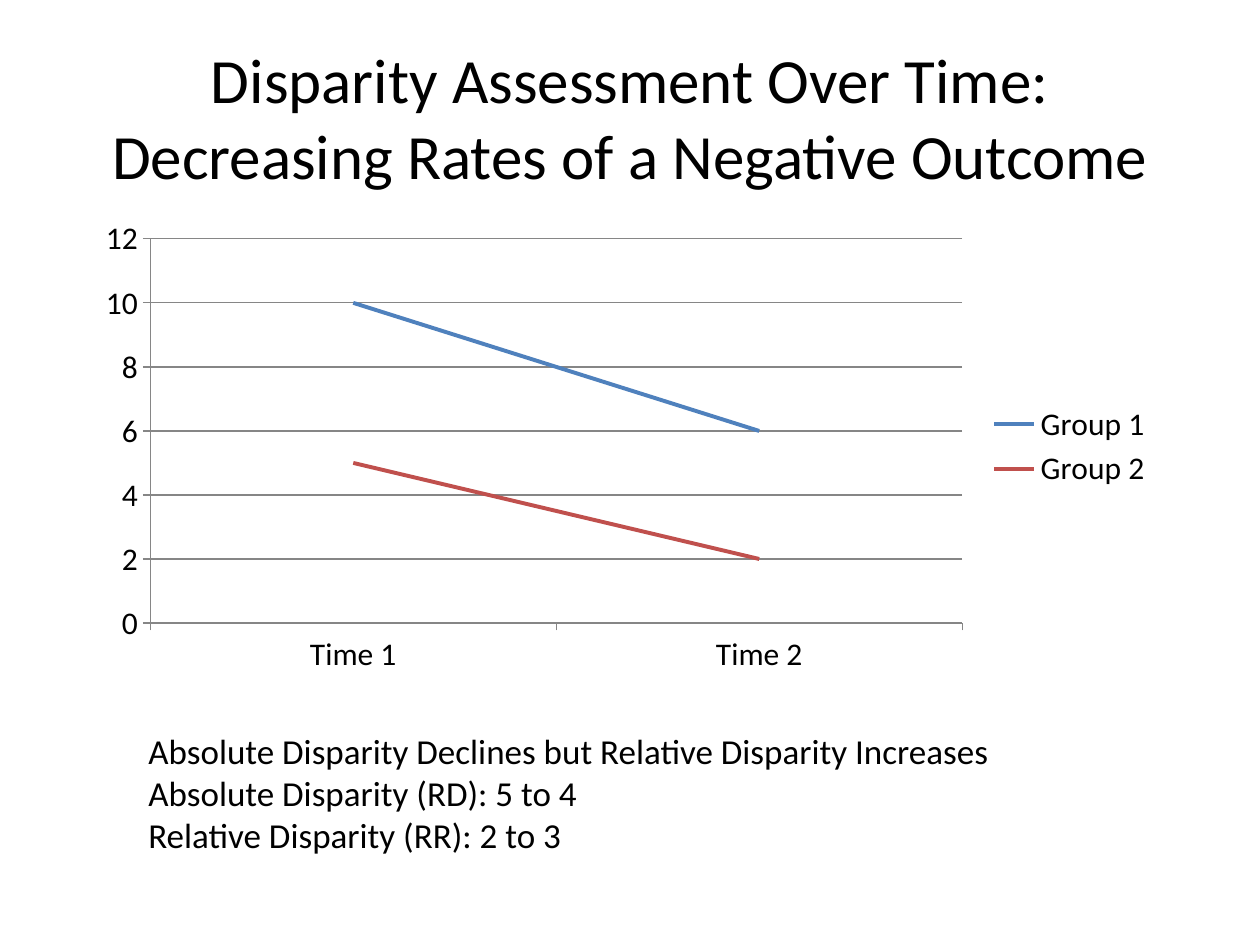
from pptx import Presentation
from pptx.chart.data import CategoryChartData
from pptx.dml.color import RGBColor
from pptx.enum.chart import XL_CHART_TYPE, XL_LEGEND_POSITION, XL_MARKER_STYLE, XL_TICK_MARK
from pptx.enum.text import MSO_ANCHOR, PP_ALIGN
from pptx.util import Cm, Pt

LINE_CHART = XL_CHART_TYPE.LINE
LEGEND_RIGHT = XL_LEGEND_POSITION.RIGHT
NO_MARKER = XL_MARKER_STYLE.NONE
TICK_OUTSIDE = XL_TICK_MARK.OUTSIDE
MIDDLE, TOP = MSO_ANCHOR.MIDDLE, MSO_ANCHOR.TOP
CENTER, LEFT = PP_ALIGN.CENTER, PP_ALIGN.LEFT

BLACK = RGBColor(0x00, 0x00, 0x00)
AXIS_GRAY = RGBColor(0x86, 0x86, 0x86)
BLUE = RGBColor(0x4F, 0x81, 0xBD)
RED = RGBColor(0xC0, 0x50, 0x4D)
FONT = "Calibri"

TITLE_BOX = (Cm(1.27), Cm(0.76), Cm(22.86), Cm(3.18))
CHART_BOX = (Cm(1.7), Cm(4.24), Cm(21.79), Cm(9.53))
FINDINGS_BOX = (Cm(2.74), Cm(14.58), Cm(21.59), Cm(2.82))

# A vertical tab is a line break inside one paragraph.
TITLE = "Disparity Assessment Over Time:\vDecreasing Rates of a Negative Outcome"
FINDINGS = (
    "Absolute Disparity Declines but Relative Disparity Increases",
    "Absolute Disparity (RD): 5 to 4",
    "Relative Disparity (RR): 2 to 3",
)
TIMES = ("Time 1", "Time 2")
GROUPS = (("Group 1", (10, 6), BLUE), ("Group 2", (5, 2), RED))


def style_font(font, size):
    font.name = FONT
    font.size = Pt(size)
    font.color.rgb = BLACK


def add_text(slide, box, text, size, align, anchor):
    frame = slide.shapes.add_textbox(*box).text_frame
    frame.word_wrap = True
    frame.vertical_anchor = anchor
    frame.text = text
    for paragraph in frame.paragraphs:
        paragraph.alignment = align
        for run in paragraph.runs:
            style_font(run.font, size)


def style_axis(axis):
    axis.major_tick_mark = TICK_OUTSIDE
    axis.format.line.color.rgb = AXIS_GRAY
    axis.format.line.width = Pt(0.75)


def add_rates_chart(slide, box):
    rates = CategoryChartData()
    rates.categories = TIMES
    for name, values, _ in GROUPS:
        rates.add_series(name, values)

    chart = slide.shapes.add_chart(LINE_CHART, *box, rates).chart
    chart.has_title = False
    style_font(chart.font, 18)
    chart.has_legend = True
    chart.legend.position = LEGEND_RIGHT
    chart.legend.include_in_layout = False

    style_axis(chart.category_axis)
    rate_axis = chart.value_axis
    style_axis(rate_axis)
    rate_axis.minimum_scale, rate_axis.maximum_scale = 0, 12
    rate_axis.major_unit = 2
    rate_axis.has_major_gridlines = True
    gridline = rate_axis.major_gridlines.format.line
    gridline.color.rgb = AXIS_GRAY
    gridline.width = Pt(0.75)

    plot = chart.plots[0]
    plot.vary_by_categories = False
    for series, (_, _, color) in zip(plot.series, GROUPS):
        series.smooth = False
        series.marker.style = NO_MARKER
        series.format.line.color.rgb = color
        series.format.line.width = Pt(2.25)


def main():
    presentation = Presentation()
    presentation.slide_width = Cm(25.4)
    presentation.slide_height = Cm(19.05)
    slide = presentation.slides.add_slide(presentation.slide_layouts[6])
    add_text(slide, TITLE_BOX, TITLE, 36, CENTER, MIDDLE)
    add_rates_chart(slide, CHART_BOX)
    add_text(slide, FINDINGS_BOX, "\n".join(FINDINGS), 20, LEFT, TOP)
    presentation.save("out.pptx")


if __name__ == "__main__":
    main()
